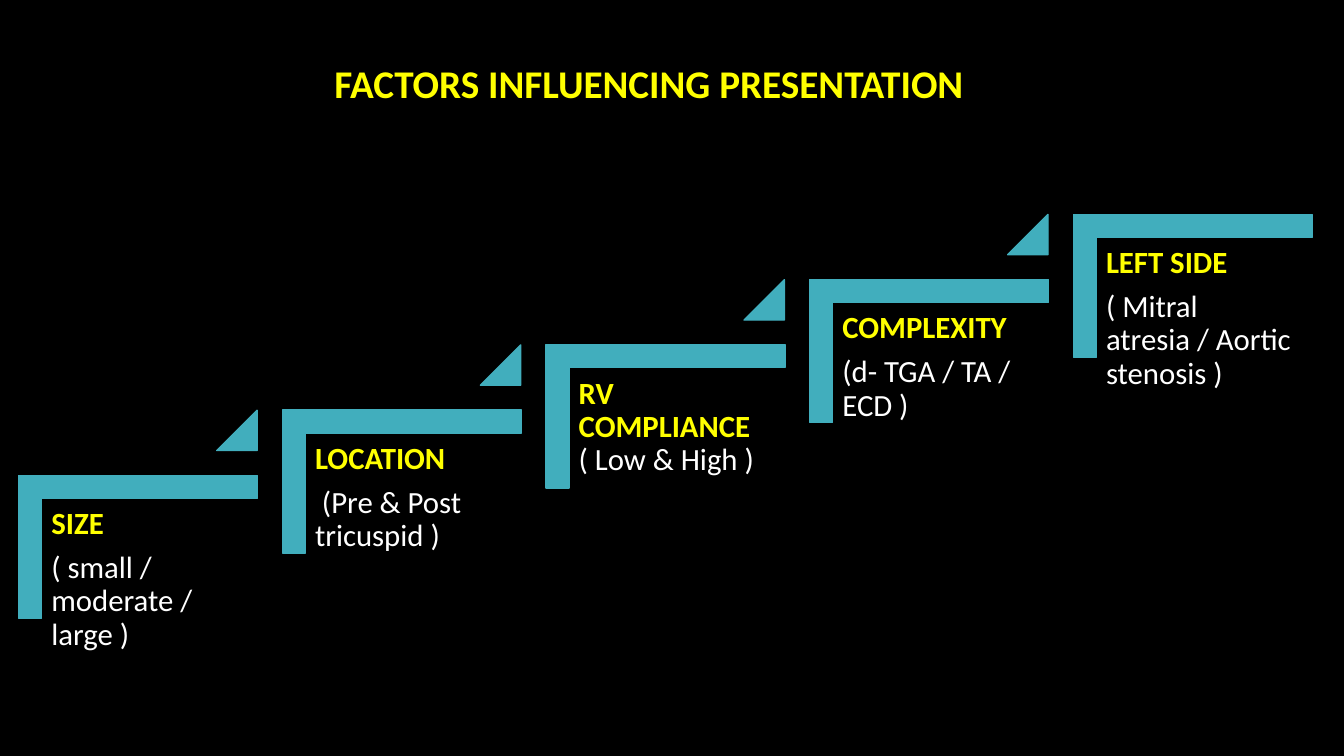
"""Build a slide with five ascending steps that influence presentation."""
from dataclasses import dataclass

from pptx import Presentation
from pptx.dml.color import RGBColor
from pptx.enum.shapes import MSO_SHAPE
from pptx.enum.text import MSO_ANCHOR, PP_ALIGN
from pptx.util import Inches, Pt

TITLE = "FACTORS INFLUENCING PRESENTATION "
STEPS = [
    [[("SIZE", True)], [("( small / moderate / large )", False)]],
    [[("LOCATION", True)], [(" (Pre & Post tricuspid )", False)]],
    [[("RV COMPLIANCE ", True), ("( Low & High )", False)]],
    [[("COMPLEXITY", True)], [("(d- TGA / TA / ECD )", False)]],
    [[("LEFT SIDE", True)], [("( Mitral atresia / Aortic stenosis )", False)]],
]


@dataclass(frozen=True)
class Theme:
    background: RGBColor = RGBColor(0x00, 0x00, 0x00)
    accent: RGBColor = RGBColor(0x41, 0xAE, 0xBD)
    heading: RGBColor = RGBColor(0xFF, 0xFF, 0x00)
    detail: RGBColor = RGBColor(0xFF, 0xFF, 0xFF)
    font: str = "Calibri"
    title_size: int = 28
    step_size: int = 22


THEME = Theme()
COLUMN_STEP, ROW_STEP = 2.615, -0.6475
CORNER = (0.66, 4.24, 1.42, 2.37)
LABEL = (0.42, 4.95, 2.14, 1.87)
TRIANGLE = (2.15, 4.07, 0.4, 0.4)


def place(box, index):
    left, top, width, height = box
    left, top = left + index * COLUMN_STEP, top + index * ROW_STEP
    return [Inches(length) for length in (left, top, width, height)]


def add_text(slide, paragraphs, position, size, align=PP_ALIGN.LEFT,
             anchor=MSO_ANCHOR.TOP, inset=0.09, space_after=0):
    frame = slide.shapes.add_textbox(*position).text_frame
    frame.word_wrap = True
    frame.vertical_anchor = anchor
    frame.margin_left = frame.margin_right = Inches(inset)
    frame.margin_top = frame.margin_bottom = Inches(inset)
    for index, runs in enumerate(paragraphs):
        paragraph = frame.add_paragraph() if index else frame.paragraphs[0]
        paragraph.alignment = align
        paragraph.line_spacing = 0.9
        paragraph.space_after = Pt(space_after)
        for text, is_heading in runs:
            run = paragraph.add_run()
            run.text = text
            run.font.name = THEME.font
            run.font.size = Pt(size)
            run.font.bold = is_heading
            run.font.color.rgb = THEME.heading if is_heading else THEME.detail


def add_accent(slide, kind, position, adjustments, rotation=0):
    shape = slide.shapes.add_shape(kind, *position)
    shape.rotation = rotation
    for index, value in enumerate(adjustments):
        shape.adjustments[index] = value
    shape.shadow.inherit = False
    shape.fill.solid()
    shape.fill.fore_color.rgb = THEME.accent
    shape.line.color.rgb = THEME.accent
    shape.line.width = Pt(1)


def main():
    presentation = Presentation()
    presentation.slide_width, presentation.slide_height = Inches(13.33), Inches(7.5)
    slide = presentation.slides.add_slide(presentation.slide_layouts[6])
    slide.background.fill.solid()
    slide.background.fill.fore_color.rgb = THEME.background

    add_text(slide, [[(TITLE, True)]], place((0.73, 0.13, 11.5, 1.45), 0),
             THEME.title_size, align=PP_ALIGN.CENTER, anchor=MSO_ANCHOR.MIDDLE)
    for index, paragraphs in enumerate(STEPS):
        add_accent(slide, MSO_SHAPE.CORNER, place(CORNER, index), (0.161, 0.161), rotation=90)
        add_text(slide, paragraphs, place(LABEL, index), THEME.step_size,
                 space_after=0.35 * THEME.step_size)
        if index < len(STEPS) - 1:
            add_accent(slide, MSO_SHAPE.ISOSCELES_TRIANGLE, place(TRIANGLE, index), (1,))
    presentation.save("out.pptx")


if __name__ == "__main__":
    main()
